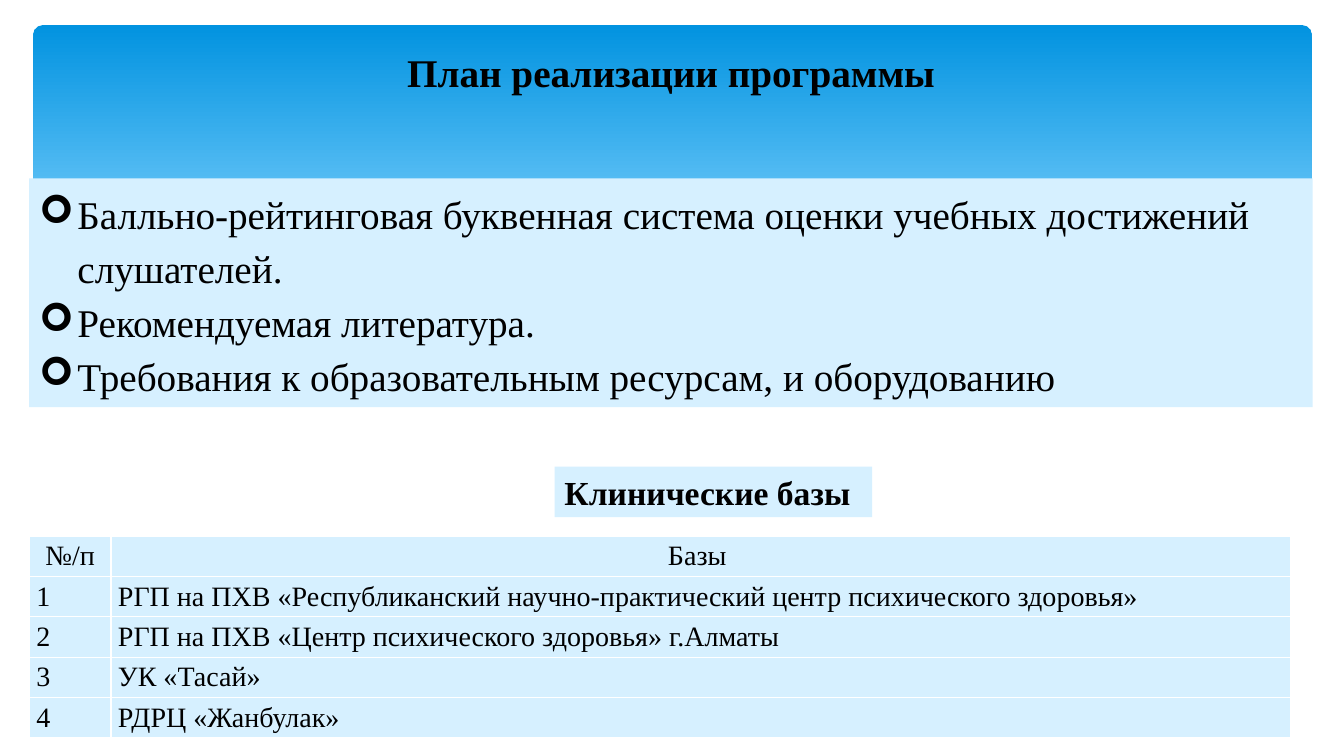
from lxml import etree
from pptx import Presentation
from pptx import util as u
from pptx.dml.color import RGBColor
from pptx.enum import shapes, text
from pptx.oxml import ns

BLACK = RGBColor(0x00, 0x00, 0x00)
PALE = RGBColor(0xD6, 0xF0, 0xFF)
DEEP = RGBColor(0x02, 0x93, 0xE0)
SKY = RGBColor(0x83, 0xD3, 0xFE)

PLAN = [
    "Балльно-рейтинговая буквенная система оценки учебных достижений слушателей.",
    "Рекомендуемая литература.",
    "Требования к образовательным ресурсам, и оборудованию",
]
BASES = [
    ("№/п", "Базы "),
    ("1", "РГП на ПХВ «Республиканский научно-практический центр психического здоровья»"),
    ("2", "РГП на ПХВ «Центр психического здоровья» г.Алматы"),
    ("3", "УК «Тасай»"),
    ("4", "РДРЦ «Жанбулак»"),
]


class ProgramSlide:
    """Hold the slide style and add each kind of element."""

    font = "Times New Roman"

    def __init__(self, deck):
        self.page = deck.slides.add_slide(deck.slide_layouts[6])

    def apply(self, target, values):
        for name, value in values.items():
            setattr(target, name, value)

    def inches(self, *lengths):
        return [u.Inches(length) for length in lengths]

    def add_words(self, para, words, size, bold=False, **layout):
        self.apply(para, layout)
        span = para.add_run()
        span.text = words
        self.apply(span.font, {"name": self.font, "size": u.Pt(size), "bold": bold})
        span.font.color.rgb = BLACK

    def bullet(self, para):
        props = para._p.get_or_add_pPr()
        props.set("marL", str(u.Inches(0.38)))
        props.set("indent", str(u.Inches(-0.38)))
        etree.SubElement(props, ns.qn("a:buFont"), typeface="Wingdings")
        etree.SubElement(props, ns.qn("a:buChar"), char="➢")

    def header(self, at):
        panel = self.page.shapes.add_shape(
            shapes.MSO_SHAPE.ROUNDED_RECTANGLE, *self.inches(*at))
        panel.shadow.inherit = False
        panel.adjustments[0] = 0.034
        panel.line.fill.background()
        panel.fill.gradient()
        panel.fill.gradient_angle = 270
        for stop, color, position in zip(panel.fill.gradient_stops, (DEEP, SKY), (0, 0.9)):
            stop.color.rgb = color
            stop.position = position

    def text_box(self, at, lines, size, fill=None, bold=False, bullets=False,
                 anchor=text.MSO_ANCHOR.TOP, **layout):
        box = self.page.shapes.add_textbox(*self.inches(*at))
        if fill is not None:
            box.fill.solid()
            box.fill.fore_color.rgb = fill
        frame = box.text_frame
        self.apply(frame, {"word_wrap": True, "vertical_anchor": anchor})
        for index, words in enumerate(lines):
            para = frame.add_paragraph() if index else frame.paragraphs[0]
            self.add_words(para, words, size, bold, **layout)
            if bullets:
                self.bullet(para)

    def border(self, cell):
        props = cell._tc.get_or_add_tcPr()
        for place, side in enumerate(("lnL", "lnR", "lnT", "lnB")):
            line = etree.Element(ns.qn(f"a:{side}"), w=str(u.Pt(1)))
            fill = etree.SubElement(line, ns.qn("a:solidFill"))
            etree.SubElement(fill, ns.qn("a:srgbClr"), val="FFFFFF")
            props.insert(place, line)

    def table(self, at, rows, widths, size):
        grid = self.page.shapes.add_table(
            len(rows), len(widths), *self.inches(*at)).table
        for column, width in zip(grid.columns, widths):
            column.width = u.Inches(width)
        margins = dict(zip(("margin_left", "margin_right", "margin_top", "margin_bottom"),
                           self.inches(0.07, 0.07, 0, 0)))
        for row, entries in enumerate(rows):
            align = text.PP_ALIGN.LEFT if row else text.PP_ALIGN.CENTER
            for column, words in enumerate(entries):
                cell = grid.cell(row, column)
                self.apply(cell, margins)
                cell.fill.solid()
                cell.fill.fore_color.rgb = PALE
                self.border(cell)
                self.add_words(cell.text_frame.paragraphs[0], words, size,
                               alignment=align, line_spacing=1.15)


def main():
    deck = Presentation()
    deck.slide_width, deck.slide_height = u.Inches(13.33), u.Inches(7.5)
    slide = ProgramSlide(deck)
    slide.header((0.33, 0.25, 12.68, 2.7))
    slide.text_box((0.37, 0.37, 12.57, 0.69), ["План реализации программы"], 28, bold=True,
                   anchor=text.MSO_ANCHOR.MIDDLE, alignment=text.PP_ALIGN.CENTER)
    slide.text_box((0.29, 1.77, 12.73, 2.27), PLAN, 28, PALE, bullets=True, line_spacing=1.15)
    slide.table((0.29, 5.32, 12.51, 2), BASES, (0.81, 11.7), 20)
    slide.text_box((5.5, 4.63, 3.15, 0.5), ["Клинические базы"], 24, PALE, bold=True)
    deck.save("out.pptx")


if __name__ == "__main__":
    main()
